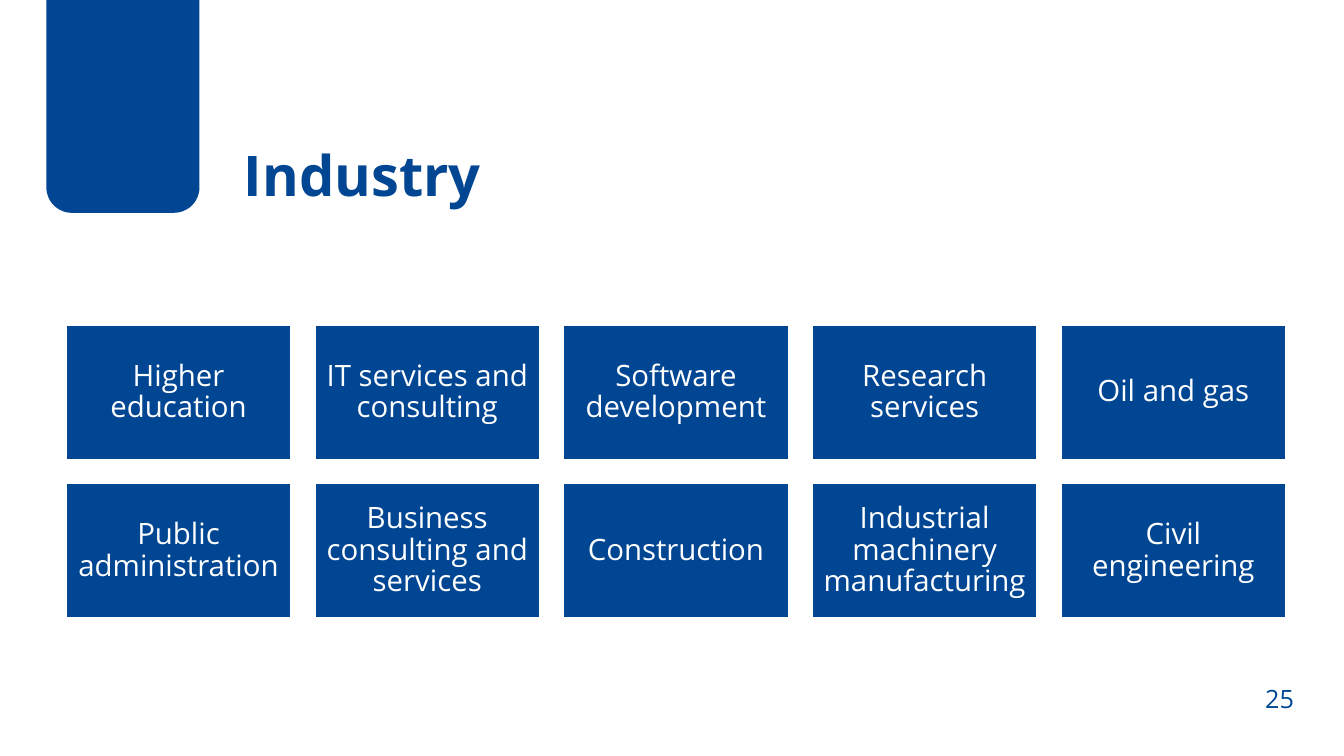
from pptx import Presentation
from pptx.dml.color import RGBColor
from pptx.enum.shapes import MSO_SHAPE
from pptx.enum.text import MSO_ANCHOR, MSO_AUTO_SIZE, PP_ALIGN
from pptx.util import Pt

RECTANGLE = MSO_SHAPE.RECTANGLE
ROUNDED = MSO_SHAPE.ROUNDED_RECTANGLE
MIDDLE, BOTTOM = MSO_ANCHOR.MIDDLE, MSO_ANCHOR.BOTTOM
LEFT, CENTER = PP_ALIGN.LEFT, PP_ALIGN.CENTER
NO_AUTOFIT = MSO_AUTO_SIZE.NONE

FONT = "Open Sans"
BLUE, WHITE = "014693", "FFFFFF"
TITLE_ONLY = 5

# Industry grid, in points
GRID_LEFT, GRID_TOP = 46.8, 231.85
CARD_WIDTH, CARD_HEIGHT, GAP = 161.5, 96.9, 16.15
INDUSTRIES = [
    ["Higher education", "IT services and consulting", "Software development",
     "Research services", "Oil and gas"],
    ["Public administration", "Business consulting and services",
     "Construction", "Industrial machinery manufacturing",
     "Civil engineering"],
]


def color(value):
    return RGBColor.from_string(value)


def write(frame, text, size, ink, align, bold=False):
    frame.text = text
    para = frame.paragraphs[0]
    para.alignment = align
    font = para.runs[0].font
    font.name, font.size, font.bold = FONT, Pt(size), bold
    font.color.rgb = color(ink)


def add_box(page, kind, left, top, width, height):
    box = page.shapes.add_shape(kind, Pt(left), Pt(top), Pt(width), Pt(height))
    box.shadow.inherit = False
    box.fill.solid()
    box.fill.fore_color.rgb = color(BLUE)
    box.line.fill.background()
    return box


def add_title(page, text):
    title = page.shapes.title
    title.left, title.top = Pt(167), Pt(32.4)
    title.width, title.height = Pt(752.4), Pt(119.5)
    frame = title.text_frame
    frame.auto_size = NO_AUTOFIT
    frame.vertical_anchor = BOTTOM
    write(frame, text, 40, BLUE, LEFT, bold=True)


def add_card(page, text, left, top):
    card = add_box(page, RECTANGLE, left, top, CARD_WIDTH, CARD_HEIGHT)
    card.line.color.rgb = color(WHITE)
    card.line.width = Pt(2)
    frame = card.text_frame
    frame.word_wrap = True
    frame.vertical_anchor = MIDDLE
    frame.margin_left = frame.margin_right = Pt(6.3)
    frame.margin_top = frame.margin_bottom = Pt(6.3)
    write(frame, text, 21, WHITE, CENTER)
    frame.paragraphs[0].line_spacing = 0.9


def add_page_number(page, number):
    box = page.shapes.add_textbox(Pt(890.6), Pt(484.6), Pt(46.8), Pt(28.8))
    box.text_frame.word_wrap = True
    write(box.text_frame, number, 18, BLUE, CENTER)


def main():
    deck = Presentation()
    deck.slide_width, deck.slide_height = Pt(960), Pt(540)
    page = deck.slides.add_slide(deck.slide_layouts[TITLE_ONLY])

    # Header: tab hanging from the top edge, and title
    add_box(page, ROUNDED, 33.1, -69.8, 109.4, 221.8)
    add_title(page, "Industry")

    # Grid of industries
    for row, names in enumerate(INDUSTRIES):
        for column, name in enumerate(names):
            add_card(page, name,
                     GRID_LEFT + column * (CARD_WIDTH + GAP),
                     GRID_TOP + row * (CARD_HEIGHT + GAP))

    add_page_number(page, "25")
    deck.save("out.pptx")


if __name__ == "__main__":
    main()
